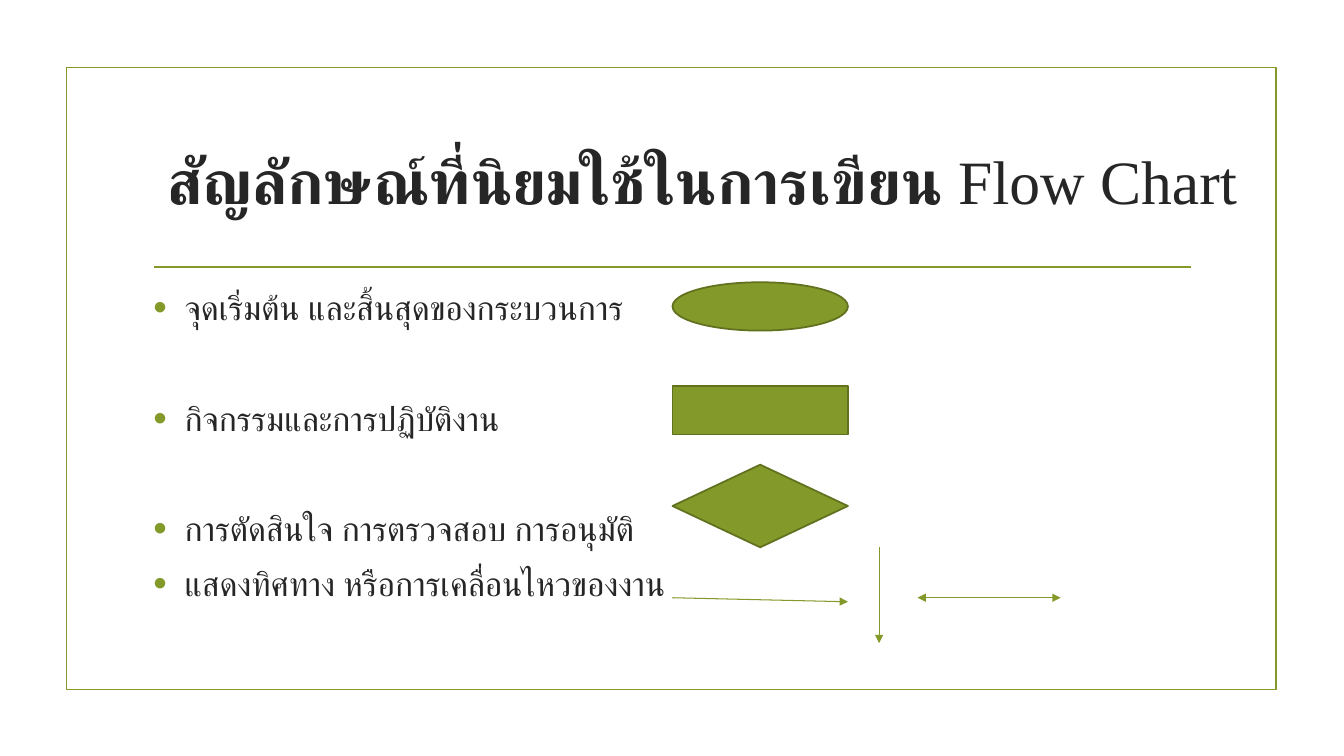
from pptx import Presentation
from pptx.dml.color import RGBColor
from pptx.enum.shapes import MSO_CONNECTOR, MSO_SHAPE
from pptx.enum.text import MSO_ANCHOR, MSO_AUTO_SIZE, PP_ALIGN
from pptx.oxml.ns import qn
from pptx.util import Inches, Pt
from lxml import etree

LINE = MSO_CONNECTOR.STRAIGHT
RECT, OVAL, DIAMOND = MSO_SHAPE.RECTANGLE, MSO_SHAPE.OVAL, MSO_SHAPE.DIAMOND
MIDDLE, TOP = MSO_ANCHOR.MIDDLE, MSO_ANCHOR.TOP
CENTER, LEFT = PP_ALIGN.CENTER, PP_ALIGN.LEFT
FIXED = MSO_AUTO_SIZE.NONE
FONT = "Times New Roman"
GREEN, DARK, INK = "83992A", "61711F", "262626"

# Text and the space before each item, in points
ITEMS = [
    ("จุดเริ่มต้น และสิ้นสุดของกระบวนการ", 0),
    ("กิจกรรมและการปฏิบัติงาน", 44),
    ("การตัดสินใจ การตรวจสอบ การอนุมัติ", 44),
    ("แสดงทิศทาง หรือการเคลื่อนไหวของงาน", 4.8),
]


def color(code):
    return RGBColor.from_string(code)


def style(run, size, bold=False):
    font = run.font
    font.name, font.size, font.bold = FONT, Pt(size), bold
    font.color.rgb = color(INK)
    props = run._r.get_or_add_rPr()
    etree.SubElement(props, qn("a:cs"), typeface=FONT)


def place(holder, box, anchor):
    holder.left, holder.top, holder.width, holder.height = map(Inches, box)
    frame = holder.text_frame
    frame.word_wrap, frame.auto_size = True, FIXED
    frame.vertical_anchor = anchor
    return frame


def add_shape(slide, kind, box, fill=None, edge=GREEN):
    shape = slide.shapes.add_shape(kind, *map(Inches, box))
    shape.shadow.inherit = False
    if fill:
        shape.fill.solid()
        shape.fill.fore_color.rgb = color(fill)
    else:
        shape.fill.background()
    shape.line.color.rgb = color(edge)
    shape.line.width = Pt(1.25)


def add_line(slide, start, end, width=0.75, heads=()):
    line = slide.shapes.add_connector(LINE, *map(Inches, (*start, *end)))
    line.line.color.rgb = color(GREEN)
    line.line.width = Pt(width)
    for tag in heads:
        etree.SubElement(line.line._get_or_add_ln(), qn(tag), type="triangle")
    etree.SubElement(line._element.spPr, qn("a:effectLst"))


def add_frame(slide, box):
    x, y, width, height = box
    add_shape(slide, RECT, box)
    rule = y + 1.98
    add_line(slide, (x + 0.87, rule), (x + width - 0.85, rule), 1.25)


def add_title(slide, box):
    para = place(slide.shapes.title, box, MIDDLE).paragraphs[0]
    para.alignment = CENTER
    for text, bold in (("สัญลักษณ์ที่นิยมใช้ในการเขียน ", True), ("Flow Chart", False)):
        run = para.add_run()
        run.text = text
        style(run, 44, bold)


def add_bullet(para):
    props = para._p.get_or_add_pPr()
    props.set("marL", str(Inches(0.31)))
    props.set("indent", str(-Inches(0.31)))
    tint = etree.SubElement(props, qn("a:buClr"))
    etree.SubElement(tint, qn("a:srgbClr"), val=GREEN)
    etree.SubElement(props, qn("a:buSzPct"), val="115000")
    etree.SubElement(props, qn("a:buFont"), typeface="Arial")
    etree.SubElement(props, qn("a:buChar"), char="•")


def add_list(slide, box):
    frame = place(slide.placeholders[1], box, TOP)
    frame.text = "\n".join(text for text, _ in ITEMS)
    for para, (_, gap) in zip(frame.paragraphs, ITEMS):
        add_bullet(para)
        para.alignment = LEFT
        para.space_before, para.space_after = Pt(gap), Pt(6)
        style(para.runs[0], 24)


def add_symbols(slide, box):
    x, y, width, height = box
    # Start or end, activity, decision
    for kind, drop, tall in ((OVAL, 0, 0.48), (RECT, 1.03, 0.48), (DIAMOND, 1.81, 0.82)):
        add_shape(slide, kind, (x, y + drop, width, tall), GREEN, DARK)
    # Direction arrows
    flow = y + 3.13
    tail = ("a:tailEnd",)
    add_line(slide, (x, flow), (x + width, flow + 0.04), heads=tail)
    add_line(slide, (x + 2.05, y + 2.63), (x + 2.05, y + height), heads=tail)
    add_line(slide, (x + 2.43, flow), (x + 3.85, flow), heads=("a:headEnd", *tail))


def main():
    deck = Presentation()
    deck.slide_width, deck.slide_height = Inches(13.33), Inches(7.5)
    slide = deck.slides.add_slide(deck.slide_layouts[1])
    add_frame(slide, (0.66, 0.67, 12, 6.17))
    add_title(slide, (0.6, 1.07, 12.73, 1.43))
    add_list(slide, (1.42, 2.8, 10.5, 3.63))
    add_symbols(slide, (6.67, 2.8, 1.74, 3.58))
    deck.save("out.pptx")


if __name__ == "__main__":
    main()
